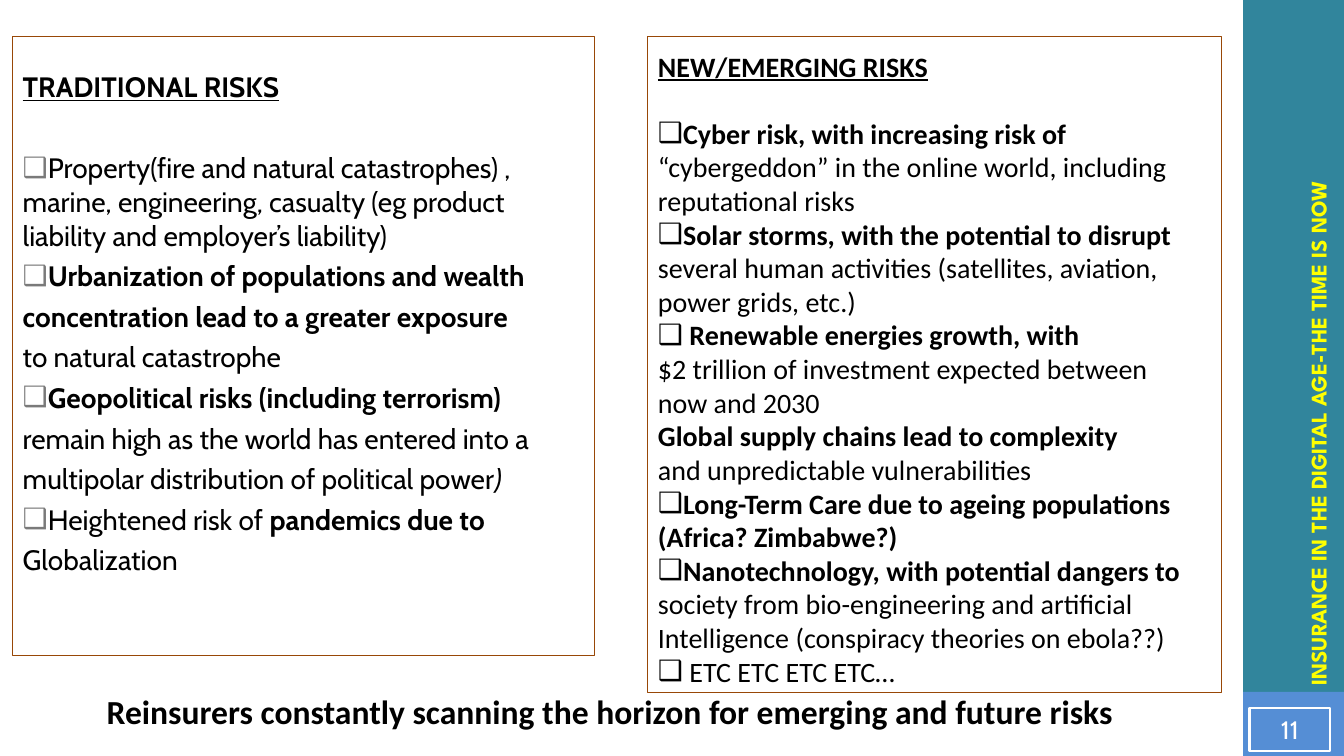
from dataclasses import dataclass

from lxml.etree import SubElement
from pptx import Presentation
from pptx.dml.color import RGBColor
from pptx.enum.shapes import MSO_SHAPE as Shape
from pptx.enum.text import MSO_ANCHOR as Anchor, MSO_AUTO_SIZE as AutoSize, PP_ALIGN as Align
from pptx.oxml.ns import qn
from pptx.util import Emu, Pt

PX = 9525  # EMU per pixel: the slide is 1280 x 720 px


@dataclass(frozen=True)
class Theme:
    teal: str = "31859C"
    blue: str = "558ED5"
    yellow: str = "FFFF00"
    brown: str = "984807"
    grey: str = "7A7A7A"
    black: str = "000000"
    white: str = "FFFFFF"
    body_font: str = "Cabin"
    list_font: str = "Calibri"
    banner_font: str = "League Spartan"
    body_size: int = 20
    takeaway_size: int = 24
    banner_size: int = 16
    number_size: int = 18


THEME = Theme()
BULLET = "❑"

# Each line: bulleted or not, then (text, style) runs; b = bold, i = italic
TRADITIONAL_RISKS = [
    (True, [("Property(fire and natural catastrophes) , marine, engineering, casualty "
             "(eg product liability and employer’s liability)", "")]),
    (True, [("Urbanization of populations and wealth", "b")]),
    (False, [("concentration lead to a greater exposure", "b")]),
    (False, [("to natural catastrophe", "")]),
    (True, [("Geopolitical risks (including terrorism)", "b")]),
    (False, [("remain high as the world has entered into a", "")]),
    (False, [("multipolar distribution of political power", ""), (")", "i")]),
    (True, [("Heightened risk of ", ""), ("pandemics due to", "b")]),
    (False, [("Globalization", "")]),
]
EMERGING_RISKS = [
    (True, [("Cyber risk, with increasing risk of", "b")]),
    (False, [("“cybergeddon” in the online world, including", "")]),
    (False, [("reputational risks", "")]),
    (True, [("Solar storms, with the potential to disrupt", "b")]),
    (False, [("several human activities (satellites, aviation,", "")]),
    (False, [("power grids, etc.)", "")]),
    (True, [(" ", ""), ("Renewable energies growth, with", "b")]),
    (False, [("$2 trillion of investment expected between", "")]),
    (False, [("now and 2030", "")]),
    (False, [("Global supply chains lead to complexity", "b")]),
    (False, [("and unpredictable vulnerabilities", "")]),
    (True, [("Long-Term Care due to ageing populations (Africa? Zimbabwe?)", "b")]),
    (True, [("Nanotechnology, with potential dangers to", "b")]),
    (False, [("society from bio-engineering and artificial", "")]),
    (False, [("Intelligence (conspiracy theories on ebola??)", "")]),
    (True, [(" ETC ETC ETC ETC…", "")]),
]


def place(shape, left, top, width, height):
    shape.left, shape.top = Emu(left * PX), Emu(top * PX)
    shape.width, shape.height = Emu(width * PX), Emu(height * PX)


def add_text(paragraph, text, font, size, color=THEME.black, bold=False,
             italic=False, underline=False):
    run = paragraph.add_run()
    run.text = text
    run.font.name, run.font.size = font, Pt(size)
    run.font.bold, run.font.italic, run.font.underline = bold, italic, underline
    run.font.color.rgb = RGBColor.from_string(color)


def set_bullet(paragraph, color=None):
    """Start the line at the margin, with a bullet if a colour is given."""
    properties = paragraph._p.get_or_add_pPr()
    properties.set("marL", "0")
    properties.set("indent", "0")
    if color is None:
        SubElement(properties, qn("a:buNone"))
        return
    bullet_color = SubElement(properties, qn("a:buClr"))
    SubElement(bullet_color, qn("a:srgbClr")).set("val", color)
    SubElement(properties, qn("a:buChar")).set("char", BULLET)


def prepare_frame(shape, anchor):
    frame = shape.text_frame
    frame.word_wrap = True
    frame.auto_size = AutoSize.NONE
    frame.vertical_anchor = anchor
    return frame


def add_rectangle(slide, box, fill=None, line=None):
    shape = slide.shapes.add_shape(Shape.RECTANGLE, 0, 0, 0, 0)
    place(shape, *box)
    shape.shadow.inherit = False
    if fill:
        shape.fill.solid()
        shape.fill.fore_color.rgb = RGBColor.from_string(fill)
    else:
        shape.fill.background()
    if line:
        shape.line.color.rgb = RGBColor.from_string(line)
        shape.line.width = Pt(1.5)
    else:
        shape.line.fill.background()
    return shape


def fill_risk_panel(panel, box, heading, lines, font, bullet_color,
                    spacing, heading_gap, bottom_inset):
    place(panel, *box)
    panel.line.color.rgb = RGBColor.from_string(THEME.brown)
    panel.line.width = Pt(0.75)
    frame = prepare_frame(panel, Anchor.BOTTOM)
    frame.margin_bottom = Emu(bottom_inset * PX)

    title = frame.paragraphs[0]
    set_bullet(title)
    title.space_before = Pt(0)
    add_text(title, heading, font, THEME.body_size, bold=True, underline=True)

    for index, (bulleted, runs) in enumerate(lines):
        paragraph = frame.add_paragraph()
        set_bullet(paragraph, bullet_color if bulleted else None)
        paragraph.space_before = Pt(spacing if index else heading_gap)
        for text, style in runs:
            add_text(paragraph, text, font, THEME.body_size,
                     bold="b" in style, italic="i" in style)


def add_sidebar(slide):
    add_rectangle(slide, (1184, 0, 96, 720), fill=THEME.teal)
    add_rectangle(slide, (1184, 659, 96, 61), fill=THEME.blue)

    banner = slide.shapes.add_textbox(0, 0, 0, 0)
    place(banner, 915, 304, 681, 36)
    banner.rotation = 270
    frame = prepare_frame(banner, Anchor.TOP)
    add_text(frame.paragraphs[0], "INSURANCE IN THE DIGITAL AGE-THE TIME IS NOW",
             THEME.banner_font, THEME.banner_size, color=THEME.yellow, bold=True)


def add_slide_number(slide, number):
    badge = add_rectangle(slide, (1190, 674, 77, 41), line=THEME.white)
    frame = prepare_frame(badge, Anchor.MIDDLE)
    frame.margin_left = frame.margin_right = frame.margin_top = frame.margin_bottom = 0
    paragraph = frame.paragraphs[0]
    paragraph.alignment = Align.CENTER
    add_text(paragraph, number, THEME.body_font, THEME.number_size, color=THEME.white)


def set_takeaway(title):
    place(title, 92, 653, 990, 48)
    paragraph = prepare_frame(title, Anchor.TOP).paragraphs[0]
    paragraph.alignment = Align.LEFT
    add_text(paragraph,
             "Reinsurers constantly scanning the horizon for emerging and future risks",
             THEME.list_font, THEME.takeaway_size, bold=True)


def main():
    presentation = Presentation()
    presentation.slide_width, presentation.slide_height = Emu(1280 * PX), Emu(720 * PX)
    two_content = presentation.slide_layouts[3]
    slide = presentation.slides.add_slide(two_content)
    takeaway, traditional, emerging = slide.placeholders

    # Sidebar with the talk's name and the slide number
    add_sidebar(slide)
    add_slide_number(slide, "11")

    # The two lists of risks
    fill_risk_panel(traditional, (12, 35, 554, 589), "TRADITIONAL RISKS",
                    TRADITIONAL_RISKS, THEME.body_font, THEME.grey,
                    spacing=5, heading_gap=34, bottom_inset=75)
    fill_risk_panel(emerging, (617, 35, 546, 625), "NEW/EMERGING RISKS",
                    EMERGING_RISKS, THEME.list_font, THEME.black,
                    spacing=0, heading_gap=24, bottom_inset=5)

    # Closing statement
    set_takeaway(takeaway)

    presentation.save("out.pptx")


if __name__ == "__main__":
    main()
